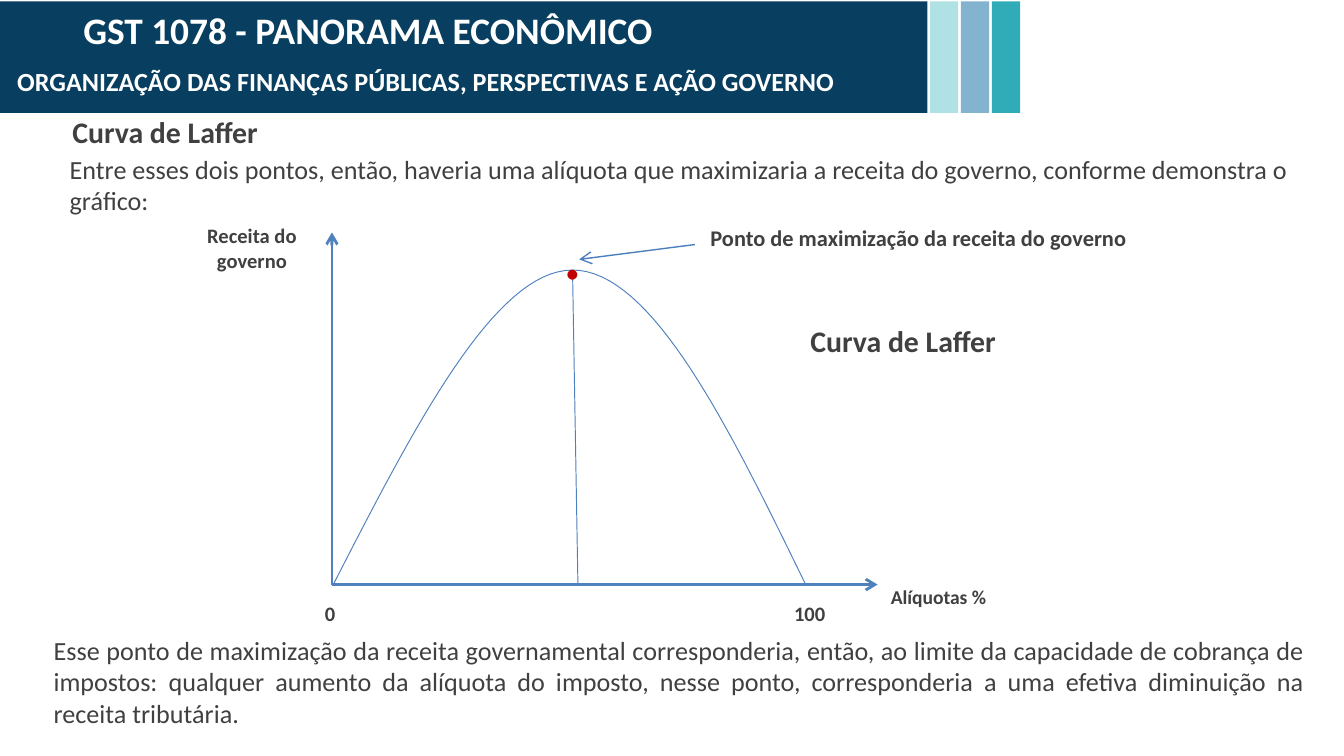
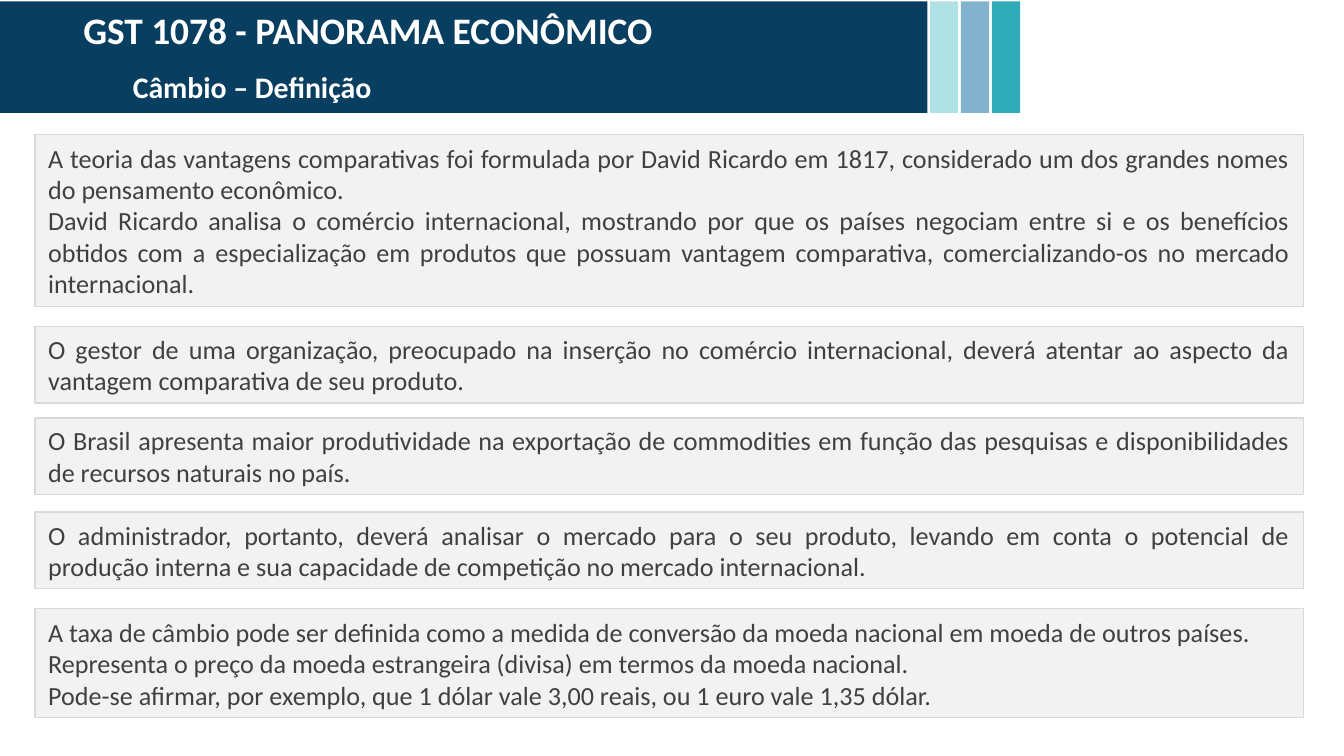
from typing import NamedTuple

from lxml.etree import SubElement
from pptx import Presentation
from pptx.dml.color import RGBColor
from pptx.enum.shapes import MSO_CONNECTOR as Connector, MSO_SHAPE as Preset
from pptx.enum.text import MSO_ANCHOR as Anchor, MSO_AUTO_SIZE as AutoSize, PP_ALIGN as Align
from pptx.oxml.ns import qn
from pptx.util import Inches, Pt

FONT = "Calibri"
NAVY = RGBColor(0x08, 0x3E, 0x5F)
STRIPE_COLORS = (RGBColor(0xB0, 0xE2, 0xE5), RGBColor(0x83, 0xB3, 0xCF), RGBColor(0x30, 0xAC, 0xB8))
WHITE = RGBColor(0xFF, 0xFF, 0xFF)
INK = RGBColor(0x40, 0x40, 0x40)
RED = RGBColor(0xC0, 0x00, 0x00)
BLUE = RGBColor(0x4F, 0x81, 0xBD)
POINTER_BLUE = RGBColor(0x4B, 0x7E, 0xBC)
PANEL_FILL = RGBColor(0xF2, 0xF2, 0xF2)
PANEL_LINE = RGBColor(0xD9, 0xD9, 0xD9)

SLIDE_WIDTH = Inches(10)
SLIDE_HEIGHT = SLIDE_WIDTH * 9 // 16
COURSE = "GST 1078 - PANORAMA ECONÔMICO"
CURVE_STEPS = 32


class Box(NamedTuple):
    left: float
    top: float
    width: float
    height: float

    def emu(self) -> tuple:
        return tuple(Inches(value) for value in self)


class Label(NamedTuple):
    text: str
    box: Box
    size: float
    color: RGBColor = INK
    bold: bool = True
    align: Align = Align.LEFT
    wrap: bool = True
    grow: bool = False


class Segment(NamedTuple):
    start: tuple[float, float]
    end: tuple[float, float]
    width: float
    color: RGBColor = BLUE
    arrow: bool = False


class Panel(NamedTuple):
    top: float
    height: float
    text: str
    align: Align = Align.JUSTIFY


ORIGIN = (2.47, 4.35)
PEAK = (4.26, 2.01)

SEGMENTS = (
    Segment(ORIGIN, (6.53, 4.35), 1.5, arrow=True),
    Segment(ORIGIN, (2.47, 1.73), 1.5, arrow=True),
    Segment(PEAK, (4.3, 4.35), 0.5),
)
POINTER = Segment((5.17, 1.82), (4.31, 1.93), 0.75, POINTER_BLUE, arrow=True)

LAFFER_BEZIERS = (
    ((2.48, 4.35), (3.08, 3.18), (3.68, 2.01), PEAK),
    (PEAK, (4.85, 2.01), (5.42, 3.17), (5.99, 4.34)),
)

GRAPH_LABELS = (
    Label("0", Box(2.32, 4.42, 0.24, 0.25), 11),
    Label("100", Box(5.81, 4.42, 0.6, 0.25), 11),
    Label("Alíquotas %", Box(6.53, 4.3, 1.13, 0.25), 10.5),
    Label("Receita do governo", Box(1.44, 1.61, 0.87, 0.42), 11, align=Align.CENTER),
    Label("Ponto de maximização da receita do governo", Box(5.12, 1.62, 3.43, 0.42), 12,
          align=Align.CENTER),
    Label("Curva de Laffer", Box(5.66, 2.35, 2.12, 0.25), 16, align=Align.CENTER),
)

LAFFER_TEXTS = (
    Label("Entre esses dois pontos, então, haveria uma alíquota que maximizaria a receita do "
          "governo, conforme demonstra o gráfico:",
          Box(0.42, 1.09, 9.39, 4.11), 14, bold=False, grow=True),
    Label("Curva de Laffer", Box(0.44, 0.8, 1.61, 0.37), 16, wrap=False, grow=True),
    Label("Esse ponto de maximização da receita governamental corresponderia, então, ao limite da "
          "capacidade de cobrança de impostos: qualquer aumento da alíquota do imposto, nesse "
          "ponto, corresponderia a uma efetiva diminuição na receita tributária.",
          Box(0.3, 4.67, 9.51, 0.81), 14, bold=False, align=Align.JUSTIFY, grow=True),
    Label(".", Box(4.09, 1.42, 0.36, 0.84), 44, RED, bold=False, wrap=False, grow=True),
)

FINANCE_SUBTITLE = Label("ORGANIZAÇÃO DAS FINANÇAS PÚBLICAS, PERSPECTIVAS E AÇÃO GOVERNO",
                         Box(0.03, 0.44, 6.33, 0.34), 14, WHITE, wrap=False, grow=True)
EXCHANGE_SUBTITLE = Label("Câmbio – Definição", Box(0.89, 0.46, 2, 0.37), 16, WHITE,
                          wrap=False, grow=True)

PANELS = (
    Panel(1, 1.28,
          "A teoria das vantagens comparativas foi formulada por David Ricardo em 1817, "
          "considerado um dos grandes nomes do pensamento econômico.\n"
          "David Ricardo analisa o comércio internacional, mostrando por que os países negociam "
          "entre si e os benefícios obtidos com a especialização em produtos que possuam vantagem "
          "comparativa, comercializando-os no mercado internacional."),
    Panel(2.43, 0.57,
          "O gestor de uma organização, preocupado na inserção no comércio internacional, deverá "
          "atentar ao aspecto da vantagem comparativa de seu produto."),
    Panel(3.11, 0.57,
          "O Brasil apresenta maior produtividade na exportação de commodities em função das "
          "pesquisas e disponibilidades de recursos naturais no país."),
    Panel(3.81, 0.57,
          "O administrador, portanto, deverá analisar o mercado para o seu produto, levando em "
          "conta o potencial de produção interna e sua capacidade de competição no mercado "
          "internacional."),
    Panel(4.53, 0.81,
          "A taxa de câmbio pode ser definida como a medida de conversão da moeda nacional em "
          "moeda de outros países.\n"
          "Representa o preço da moeda estrangeira (divisa) em termos da moeda nacional.\n"
          "Pode-se afirmar, por exemplo, que 1 dólar vale 3,00 reais, ou 1 euro vale 1,35 dólar.",
          Align.LEFT),
)


def write_text(shape, label: Label, anchor: Anchor = Anchor.TOP) -> None:
    frame = shape.text_frame
    frame.text = label.text
    frame.word_wrap = label.wrap
    frame.auto_size = AutoSize.SHAPE_TO_FIT_TEXT if label.grow else AutoSize.NONE
    frame.vertical_anchor = anchor
    for paragraph in frame.paragraphs:
        paragraph.alignment = label.align
        for run in paragraph.runs:
            run.font.name = FONT
            run.font.size = Pt(label.size)
            run.font.bold = label.bold
            run.font.color.rgb = label.color


def add_label(shapes, label: Label) -> None:
    write_text(shapes.add_textbox(*label.box.emu()), label)


def add_rectangle(shapes, box: Box, fill: RGBColor):
    rectangle = shapes.add_shape(Preset.RECTANGLE, *box.emu())
    rectangle.shadow.inherit = False
    rectangle.fill.solid()
    rectangle.fill.fore_color.rgb = fill
    rectangle.line.fill.background()
    return rectangle


def add_segment(shapes, segment: Segment) -> None:
    ends = (Inches(value) for value in segment.start + segment.end)
    connector = shapes.add_connector(Connector.STRAIGHT, *ends)
    connector.line.color.rgb = segment.color
    connector.line.width = Pt(segment.width)
    properties = connector.element.spPr
    if segment.arrow:
        SubElement(properties.find(qn("a:ln")), qn("a:tailEnd"), type="arrow")
    SubElement(properties, qn("a:effectLst"))


def bezier_point(controls: tuple, t: float) -> tuple[int, int]:
    weights = ((1 - t) ** 3, 3 * t * (1 - t) ** 2, 3 * t * t * (1 - t), t ** 3)
    x, y = (sum(w * c for w, c in zip(weights, axis)) for axis in zip(*controls))
    return Inches(x), Inches(y)


def add_laffer_curve(shapes) -> None:
    points = [bezier_point(controls, step / CURVE_STEPS)
              for controls in LAFFER_BEZIERS for step in range(CURVE_STEPS + 1)]
    builder = shapes.build_freeform(*points[0])
    builder.add_line_segments(points[1:], close=False)
    curve = builder.convert_to_shape()
    curve.shadow.inherit = False
    curve.fill.background()
    curve.line.color.rgb = BLUE
    curve.line.width = Pt(0.5)


def add_panel(shapes, panel: Panel) -> None:
    box = Box(0.26, panel.top, 9.44, panel.height)
    rectangle = add_rectangle(shapes, box, PANEL_FILL)
    rectangle.line.color.rgb = PANEL_LINE
    rectangle.line.width = Pt(0.75)
    write_text(rectangle, Label(panel.text, box, 14, bold=False, align=panel.align, grow=True),
               Anchor.MIDDLE)


def add_bands_to_layout(slide) -> None:
    """Draw the header bands on a slide, then move them to the layout all slides share."""
    layout = slide.slide_layout
    for placeholder in list(layout.placeholders):
        if placeholder.placeholder_format.idx != 0:
            layout.shapes.element.remove(placeholder.element)
    bands = [add_rectangle(slide.shapes, Box(-0.02, 0.01, 6.92, 0.83), NAVY)]
    for index, color in enumerate(STRIPE_COLORS):
        box = Box(6.92 + 0.23 * index, 0.01, 0.21, 0.83)
        bands.append(add_rectangle(slide.shapes, box, color))
    for band in bands:
        layout.shapes.element.append(band.element)


def add_header(slide, subtitle: Label) -> None:
    course = Label(COURSE, Box(0.01, 0, 5.46, 0.44), 20, WHITE, align=Align.CENTER, grow=True)
    title = slide.shapes.title
    title.left, title.top, title.width, title.height = course.box.emu()
    write_text(title, course)
    add_label(slide.shapes, subtitle)


def build_laffer_slide(slide) -> None:
    add_header(slide, FINANCE_SUBTITLE)
    graph = slide.shapes.add_group_shape().shapes
    for segment in SEGMENTS:
        add_segment(graph, segment)
    add_laffer_curve(graph)
    for label in GRAPH_LABELS:
        add_label(graph, label)
    for label in LAFFER_TEXTS:
        add_label(slide.shapes, label)
    add_segment(slide.shapes, POINTER)


def build_exchange_slide(slide) -> None:
    add_header(slide, EXCHANGE_SUBTITLE)
    for panel in PANELS:
        add_panel(slide.shapes, panel)


def main() -> None:
    deck = Presentation()
    deck.slide_width, deck.slide_height = SLIDE_WIDTH, SLIDE_HEIGHT
    title_only = deck.slide_layouts[5]
    laffer_slide = deck.slides.add_slide(title_only)
    add_bands_to_layout(laffer_slide)
    build_laffer_slide(laffer_slide)
    build_exchange_slide(deck.slides.add_slide(title_only))
    deck.save("out.pptx")


if __name__ == "__main__":
    main()
